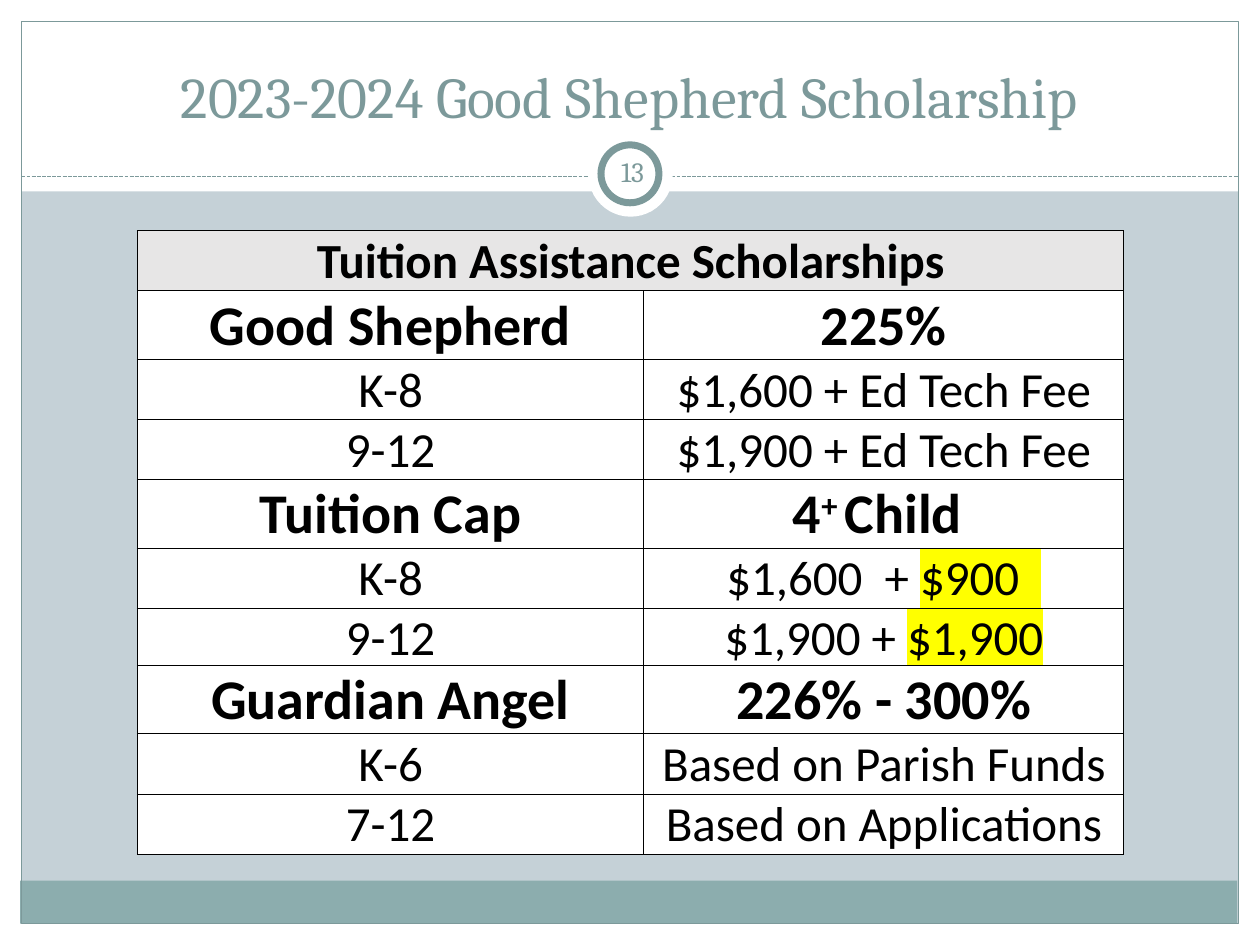
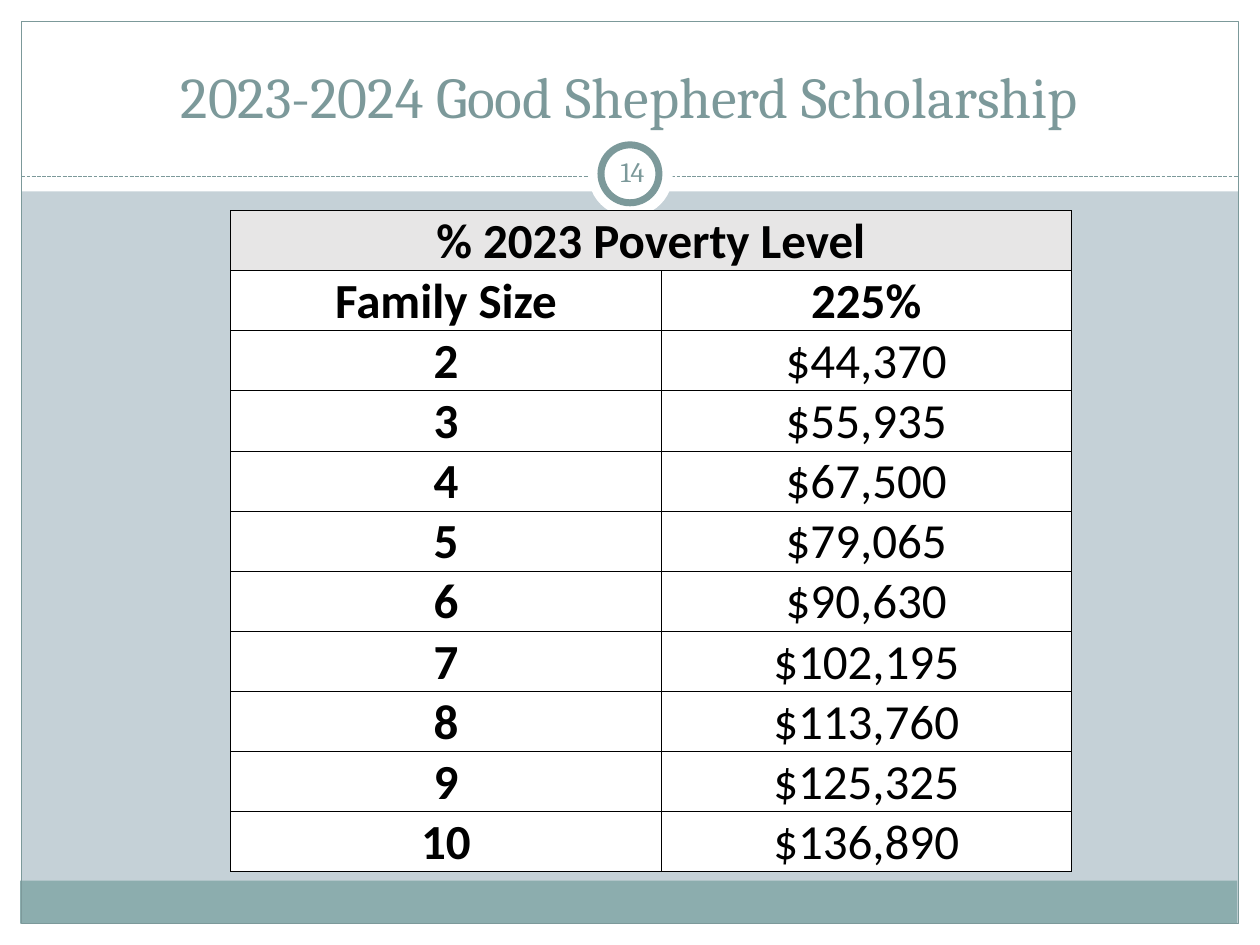
from dataclasses import dataclass
from typing import NamedTuple, Optional

from lxml import etree
from pptx import Presentation
from pptx.dml.color import RGBColor
from pptx.enum.dml import MSO_LINE
from pptx.enum.shapes import MSO_CONNECTOR, MSO_SHAPE
from pptx.enum.text import MSO_ANCHOR, PP_ALIGN
from pptx.oxml.ns import qn
from pptx.util import Inches, Pt

RECT, OVAL = MSO_SHAPE.RECTANGLE, MSO_SHAPE.OVAL
STRAIGHT = MSO_CONNECTOR.STRAIGHT
SYS_DASH = MSO_LINE.SQUARE_DOT
CENTER = PP_ALIGN.CENTER
MIDDLE, BOTTOM = MSO_ANCHOR.MIDDLE, MSO_ANCHOR.BOTTOM


@dataclass(frozen=True)
class Theme:
    background: str = "C5D1D7"
    paper: str = "FFFFFF"
    band: str = "8CADAE"
    accent: str = "7C999A"
    ink: str = "000000"
    header: str = "E7E6E6"
    highlight: str = "FFFF00"
    title_font: str = "Cambria"
    table_font: str = "Calibri"
    title_size: float = 33
    number_size: float = 16
    body_size: float = 28
    group_size: float = 32
    frame_width: float = 0.75
    ring_width: float = 4
    border_width: float = 0.5


THEME = Theme()
TITLE = "2023-2024 Good Shepherd Scholarship"
ROW_HEIGHT = 0.38


class Box(NamedTuple):
    left: float
    top: float
    width: float
    height: float

    def inches(self) -> tuple:
        return tuple(Inches(v) for v in self)


class Panel(NamedTuple):
    box: Box
    fill: Optional[str] = None
    line_width: float = 0
    kind: int = RECT


class Span(NamedTuple):
    """A stretch of cell text with its own marking."""
    text: str
    raised: bool = False
    marked: bool = False


class Row(NamedTuple):
    """Cells are strings or lists of spans; a single cell spans the table."""
    cells: tuple
    bold: tuple = (False, False)
    size: float = THEME.body_size
    fill: str = THEME.paper


class Grid(NamedTuple):
    left: float
    top: float
    columns: tuple
    rows: list


BACKDROP = [
    Panel(Box(0, 7.33, 10, 0.17), THEME.paper),
    Panel(Box(0, 0, 10, 1.52), THEME.paper),
    Panel(Box(0, 0, 0.17, 7.5), THEME.paper),
    Panel(Box(9.83, 0, 0.17, 7.5), THEME.paper),
    Panel(Box(0.16, 6.99, 9.66, 0.34), THEME.band),
    Panel(Box(0.17, 0.17, 9.66, 7.16), None, THEME.frame_width),
]
BADGE = [
    Panel(Box(4.67, 1.05, 0.67, 0.67), THEME.paper, kind=OVAL),
    Panel(Box(4.77, 1.15, 0.46, 0.46), THEME.paper, THEME.ring_width, OVAL),
]


def header_row(text: str) -> Row:
    return Row((text,), (True,), fill=THEME.header)


def group_row(*cells) -> Row:
    return Row(cells, (True, True), THEME.group_size)


SCHOLARSHIPS = Grid(1.09, 1.83, (4.02, 3.81), [
    header_row("Tuition Assistance Scholarships"),
    group_row("Good Shepherd", "225%"),
    Row(("K-8", "$1,600 + Ed Tech Fee")),
    Row(("9-12", "$1,900 + Ed Tech Fee")),
    group_row("Tuition Cap", [Span("4"), Span("+ ", raised=True), Span("Child ")]),
    Row(("K-8", [Span("$1,600  + "), Span("$900  ", marked=True)])),
    Row(("9-12", [Span("$1,900 + "), Span("$1,900", marked=True)])),
])
GUARDIAN_ANGEL = Grid(1.09, 5.28, (4.02, 3.81), [
    group_row("Guardian Angel", "226% - 300%"),
    Row(("K-6", "Based on Parish Funds")),
    Row(("7-12", "Based on Applications")),
])
INCOME_LIMITS = ["$44,370", "$55,935", "$67,500", "$79,065", "$90,630",
                 "$102,195", "$113,760", "$125,325", "$136,890"]
POVERTY_LEVEL = Grid(1.83, 1.67, (3.42, 3.25), [
    header_row("% 2023 Poverty Level"),
    Row(("Family Size", "225%"), (True, True)),
    *[Row((str(family_size), limit), (True, False))
      for family_size, limit in enumerate(INCOME_LIMITS, start=2)],
])


def rgb(color: str) -> RGBColor:
    return RGBColor.from_string(color)


def style_run(r, font: str, size: float, color: str, bold: bool = False) -> None:
    r.font.name = font
    r.font.size = Pt(size)
    r.font.bold = bold
    r.font.color.rgb = rgb(color)


def add_panel(slide, panel: Panel) -> None:
    sp = slide.shapes.add_shape(panel.kind, *panel.box.inches())
    sp.shadow.inherit = False
    if panel.fill:
        sp.fill.solid()
        sp.fill.fore_color.rgb = rgb(panel.fill)
    else:
        sp.fill.background()
    if panel.line_width:
        sp.line.color.rgb = rgb(THEME.accent)
        sp.line.width = Pt(panel.line_width)
    else:
        sp.line.fill.background()


def add_divider(slide) -> None:
    line = slide.shapes.add_connector(
        STRAIGHT, Inches(0.17), Inches(1.4), Inches(9.83), Inches(1.4))
    line.line.color.rgb = rgb(THEME.accent)
    line.line.width = Pt(THEME.frame_width)
    line.line.dash_style = SYS_DASH
    etree.SubElement(line._element.spPr, qn("a:effectLst"))


def add_label(slide, box: Box, text: str, size: float, anchor, side_inset: float) -> None:
    tf = slide.shapes.add_textbox(*box.inches()).text_frame
    tf.word_wrap = True
    tf.vertical_anchor = anchor
    tf.margin_left = tf.margin_right = Inches(side_inset)
    tf.text = text
    p = tf.paragraphs[0]
    p.alignment = CENTER
    style_run(p.runs[0], THEME.title_font, size, THEME.accent)


def add_borders(cell) -> None:
    tc_pr = cell._tc.get_or_add_tcPr()
    for position, side in enumerate(("a:lnL", "a:lnR", "a:lnT", "a:lnB")):
        ln = etree.Element(qn(side), w=str(Pt(THEME.border_width)))
        fill = etree.SubElement(ln, qn("a:solidFill"))
        etree.SubElement(fill, qn("a:srgbClr"), val=THEME.ink)
        tc_pr.insert(position, ln)


def mark_span(r, span: Span) -> None:
    r_pr = r._r.get_or_add_rPr()
    if span.raised:
        r_pr.set("baseline", "30000")
    if span.marked:
        highlight = etree.Element(qn("a:highlight"))
        etree.SubElement(highlight, qn("a:srgbClr"), val=THEME.highlight)
        r_pr.find(qn("a:solidFill")).addnext(highlight)


def fill_cell(cell, content, row: Row, bold: bool) -> None:
    cell.vertical_anchor = BOTTOM
    cell.margin_left = cell.margin_right = cell.margin_top = Inches(0.01)
    cell.margin_bottom = 0
    p = cell.text_frame.paragraphs[0]
    p.alignment = CENTER
    for span in [Span(content)] if isinstance(content, str) else content:
        r = p.add_run()
        r.text = span.text
        style_run(r, THEME.table_font, row.size, THEME.ink, bold)
        mark_span(r, span)


def add_grid(slide, grid: Grid) -> None:
    box = Box(grid.left, grid.top, sum(grid.columns), ROW_HEIGHT * len(grid.rows))
    table = slide.shapes.add_table(
        len(grid.rows), len(grid.columns), *box.inches()).table
    table.first_row = table.horz_banding = False
    for column, width in zip(table.columns, grid.columns):
        column.width = Inches(width)
    for i, row in enumerate(grid.rows):
        table.rows[i].height = Inches(ROW_HEIGHT)
        cells = list(table.rows[i].cells)
        if len(row.cells) == 1:
            cells[0].merge(cells[-1])
        for cell in cells:
            cell.fill.solid()
            cell.fill.fore_color.rgb = rgb(row.fill)
            add_borders(cell)
        for cell, content, bold in zip(cells, row.cells, row.bold):
            fill_cell(cell, content, row, bold)


def add_scholarship_slide(prs, number: int, grids: list) -> None:
    slide = prs.slides.add_slide(prs.slide_layouts[6])
    slide.background.fill.solid()
    slide.background.fill.fore_color.rgb = rgb(THEME.background)
    for panel in BACKDROP:
        add_panel(slide, panel)
    add_divider(slide)
    for panel in BADGE:
        add_panel(slide, panel)
    add_label(slide, Box(0.33, 0.25, 9.33, 0.83), TITLE, THEME.title_size, BOTTOM, 0.1)
    add_label(slide, Box(4.77, 1.12, 0.5, 0.48), str(number),
              THEME.number_size, MIDDLE, 0.05)
    for grid in grids:
        add_grid(slide, grid)


def main() -> None:
    prs = Presentation()
    prs.slide_width, prs.slide_height = Inches(10), Inches(7.5)
    add_scholarship_slide(prs, 13, [SCHOLARSHIPS, GUARDIAN_ANGEL])
    add_scholarship_slide(prs, 14, [POVERTY_LEVEL])
    prs.save("out.pptx")


if __name__ == "__main__":
    main()
